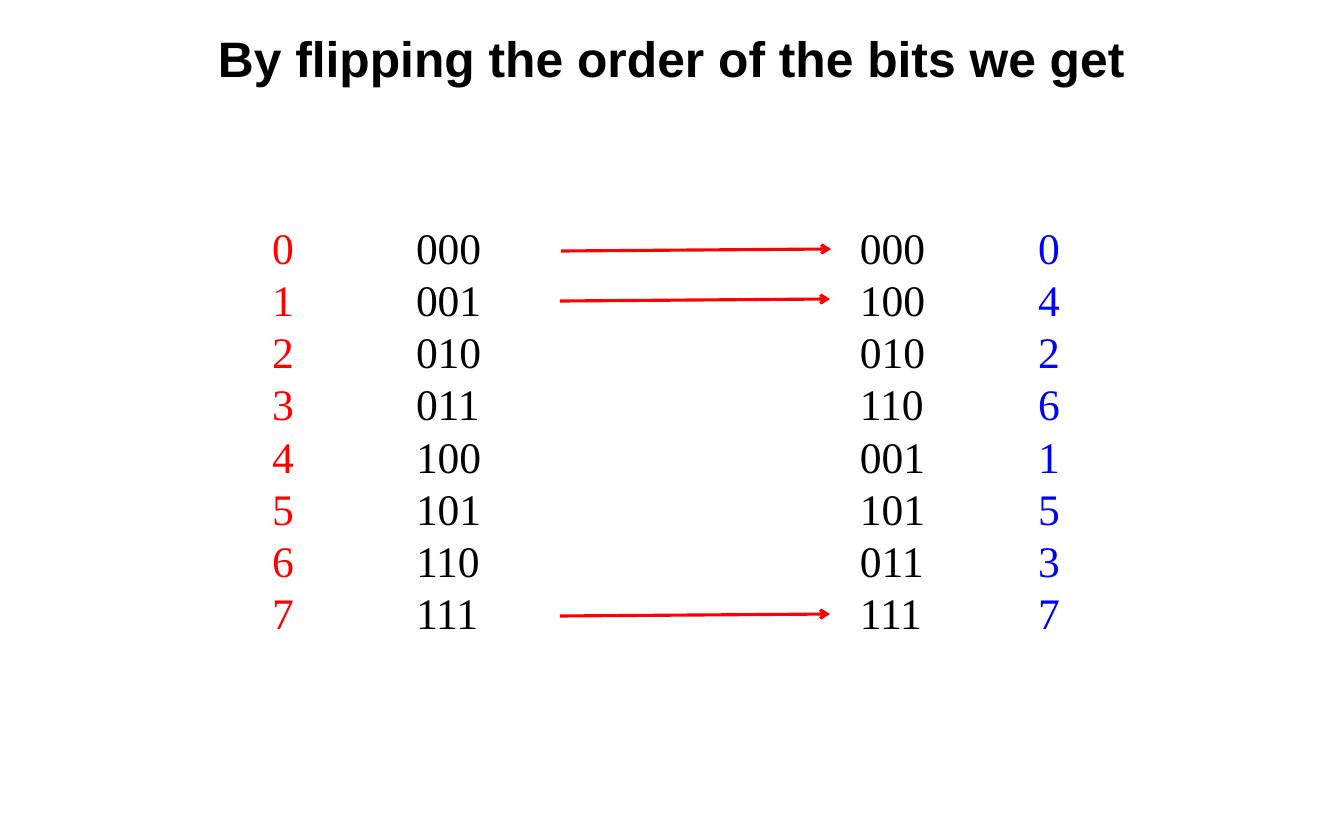
from dataclasses import dataclass

from pptx import Presentation
from pptx.dml.color import RGBColor
from pptx.enum.shapes import MSO_CONNECTOR
from pptx.enum.text import MSO_ANCHOR, MSO_AUTO_SIZE, PP_ALIGN
from pptx.oxml.ns import qn
from pptx.util import Pt
from lxml.etree import SubElement

PX = 914400 // 112


@dataclass(frozen=True)
class Theme:
    black: str = "000000"
    red: str = "FF0000"
    blue: str = "0000FF"
    title_font: str = "Arial"
    body_font: str = "Times New Roman"
    title_size: int = 32
    body_size: int = 28
    line_width: int = 2


def set_text(tf, lines, *, font, size, color, bold=False,
             align=PP_ALIGN.LEFT, spacing=1.0):
    for i, line in enumerate(lines):
        p = tf.add_paragraph() if i else tf.paragraphs[0]
        p.alignment = align
        p.line_spacing = spacing
        r = p.add_run()
        r.text = line
        r.font.name = font
        r.font.size = Pt(size)
        r.font.bold = bold
        r.font.color.rgb = RGBColor.from_string(color)


class SlideBuilder:
    def __init__(self, s, theme):
        self.s = s
        self.theme = theme

    def title(self, text, x, y, w, h):
        t = self.theme
        sp = self.s.shapes.title
        sp.left, sp.top, sp.width, sp.height = (v * PX for v in (x, y, w, h))
        tf = sp.text_frame
        tf.auto_size = MSO_AUTO_SIZE.NONE
        tf.vertical_anchor = MSO_ANCHOR.MIDDLE
        set_text(tf, [text], font=t.title_font, size=t.title_size,
                 color=t.black, bold=True, align=PP_ALIGN.CENTER, spacing=0.9)

    def column(self, lines, x, y, w, h, color):
        t = self.theme
        sp = self.s.shapes.add_textbox(*(v * PX for v in (x, y, w, h)))
        tf = sp.text_frame
        tf.word_wrap = False
        tf.auto_size = MSO_AUTO_SIZE.SHAPE_TO_FIT_TEXT
        set_text(tf, lines, font=t.body_font, size=t.body_size, color=color,
                 spacing=Pt(1.2 * t.body_size))

    def arrow(self, x1, y1, x2, y2):
        sp = self.s.shapes.add_connector(
            MSO_CONNECTOR.STRAIGHT, *(v * PX for v in (x1, y1, x2, y2)))
        sp.line.color.rgb = RGBColor.from_string(self.theme.red)
        sp.line.width = Pt(self.theme.line_width)
        SubElement(sp.line._get_or_add_ln(), qn("a:tailEnd"), type="arrow")
        SubElement(sp._element.spPr, qn("a:effectLst"))


def main():
    prs = Presentation()
    prs.slide_width, prs.slide_height = 1344 * PX, 840 * PX
    theme = Theme()
    slide = SlideBuilder(prs.slides.add_slide(prs.slide_layouts[5]), theme)
    slide.title("By flipping the order of the bits we get", 112, 19, 1120, 84)

    bits = [f"{n:03b}" for n in range(8)]
    flipped = [b[::-1] for b in bits]
    top, height, bits_width, number_width = 215, 433, 88, 45
    slide.column(bits, 405, top, bits_width, height, theme.black)
    slide.column(flipped, 849, top, bits_width, height, theme.black)
    for x, y in ((561, 251), (560, 301), (560, 616)):
        slide.arrow(x, y, x + 270, y - 2)
    for codes, x, color in ((bits, 261, theme.red), (flipped, 1027, theme.blue)):
        numbers = [str(int(code, 2)) for code in codes]
        slide.column(numbers, x, top, number_width, height, color)

    prs.save("out.pptx")


if __name__ == "__main__":
    main()
